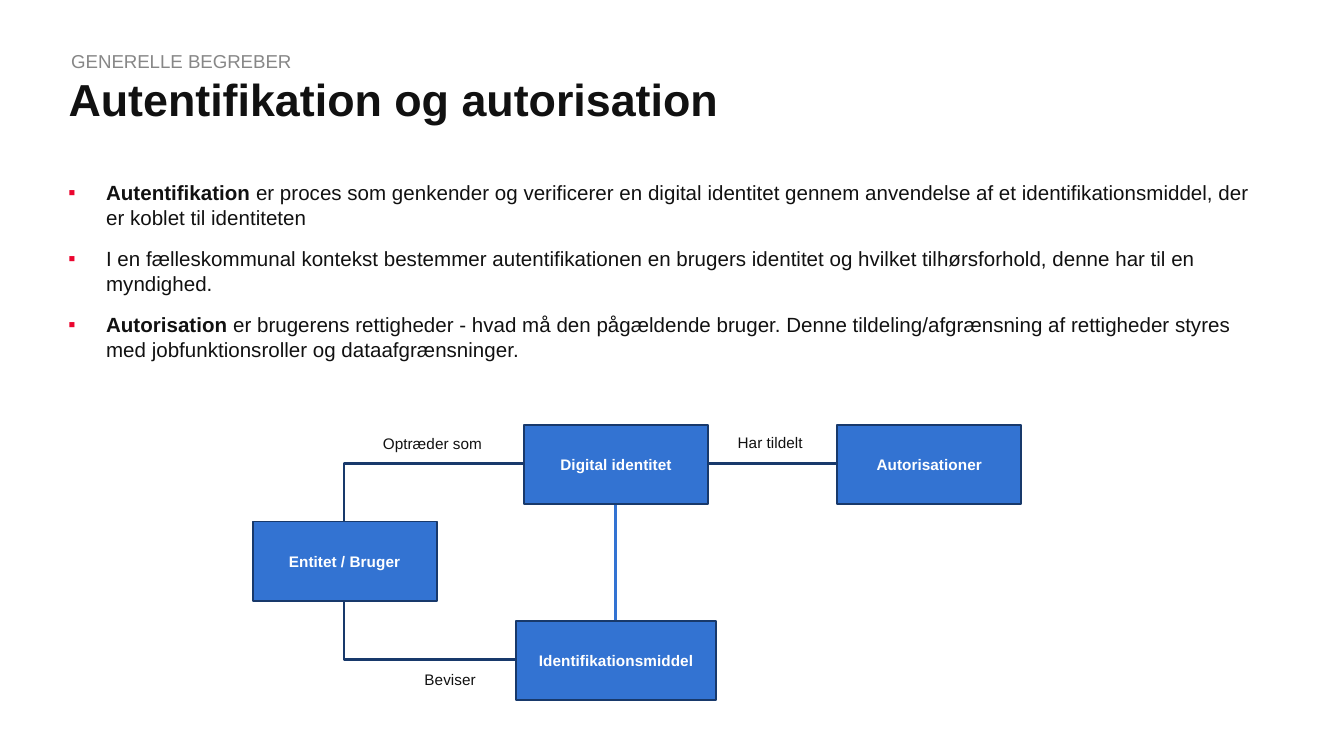
from lxml.etree import SubElement
from pptx import Presentation
from pptx.dml.color import RGBColor
from pptx.enum.shapes import MSO_CONNECTOR, MSO_SHAPE
from pptx.enum.text import MSO_ANCHOR, PP_ALIGN
from pptx.oxml.ns import qn
from pptx.util import Inches, Pt

COLORS = {
    "text": "111111",
    "muted": "878787",
    "bullet": "EB052F",
    "blue": "3373D2",
    "navy": "18396B",
    "white": "FFFFFF",
}
FONT = "Arial"
LABEL_SIZE = 8.25
BOX_WIDTH, BOX_HEIGHT = 1.37, 0.59

BULLETS = [
    [("Autentifikation", True),
     (" er proces som genkender og verificerer en digital identitet gennem anvendelse "
      "af et identifikationsmiddel, der er koblet til identiteten", False)],
    [("I en fælleskommunal kontekst bestemmer autentifikationen en brugers identitet "
      "og hvilket tilhørsforhold, denne har til en myndighed.", False)],
    [("Autorisation", True),
     (" er brugerens rettigheder - hvad må den pågældende bruger. Denne "
      "tildeling/afgrænsning af rettigheder styres med jobfunktionsroller og "
      "dataafgrænsninger.", False)],
]
ENTITIES = [
    ("Entitet / Bruger", 1.88, 3.88, BOX_WIDTH),
    ("Identifikationsmiddel", 3.84, 4.62, 1.49),
    ("Digital identitet", 3.9, 3.16, BOX_WIDTH),
    ("Autorisationer", 6.23, 3.16, BOX_WIDTH),
]
LABELS = [
    ("Beviser", 3.06, 4.94, 0.94),
    ("Optræder som", 2.75, 3.18, 1.1),
    ("Har tildelt", 5.39, 3.17, 0.94),
]


def color(name):
    return RGBColor.from_string(COLORS[name])


def add_span(para, text, size, color_name="text", bold=False):
    span = para.add_run()
    span.text = text
    span.font.name = FONT
    span.font.size = Pt(size)
    span.font.bold = bold
    span.font.color.rgb = color(color_name)


def add_text_box(page, left, top, width, height, margins=(0.1, 0.05, 0.1, 0.05)):
    box = page.shapes.add_textbox(Inches(left), Inches(top), Inches(width), Inches(height))
    frame = box.text_frame
    frame.word_wrap = True
    (frame.margin_left, frame.margin_top,
     frame.margin_right, frame.margin_bottom) = map(Inches, margins)
    return frame


def set_bullet(para):
    properties = para._p.get_or_add_pPr()
    properties.set("marL", str(Inches(0.28)))
    properties.set("indent", str(-Inches(0.28)))
    bullet_color = SubElement(properties, qn("a:buClr"))
    SubElement(bullet_color, qn("a:srgbClr"), val=COLORS["bullet"])
    SubElement(properties, qn("a:buFont"), typeface=FONT)
    SubElement(properties, qn("a:buChar"), char="▪")


def add_bullets(page):
    frame = add_text_box(page, 0.51, 1.34, 8.9, 3.47, (0, 0, 0.1, 0))
    for index, spans in enumerate(BULLETS):
        para = frame.paragraphs[0] if index == 0 else frame.add_paragraph()
        set_bullet(para)
        para.space_before = Pt(3 if index else 0)
        para.space_after = Pt(6)
        for text, bold in spans:
            add_span(para, text, 11, bold=bold)


def add_entity(page, text, left, top, width):
    box = page.shapes.add_shape(
        MSO_SHAPE.RECTANGLE, Inches(left), Inches(top), Inches(width), Inches(BOX_HEIGHT))
    box.shadow.inherit = False
    box.fill.solid()
    box.fill.fore_color.rgb = color("blue")
    box.line.color.rgb = color("navy")
    box.line.width = Pt(1)
    box.text_frame.word_wrap = True
    box.text_frame.vertical_anchor = MSO_ANCHOR.MIDDLE
    para = box.text_frame.paragraphs[0]
    para.alignment = PP_ALIGN.CENTER
    add_span(para, text, LABEL_SIZE, "white", bold=True)


def add_link(page, start, end, color_name="navy", bent=False):
    kind = MSO_CONNECTOR.ELBOW if bent else MSO_CONNECTOR.STRAIGHT
    link = page.shapes.add_connector(kind, *map(Inches, start + end))
    link.line.color.rgb = color(color_name)
    link.line.width = Pt(1.5)
    properties = link.element.spPr
    if bent:
        properties.find(qn("a:prstGeom")).set("prst", "bentConnector2")
    SubElement(properties, qn("a:effectLst"))


def main():
    deck = Presentation()
    deck.slide_width = Inches(10)
    deck.slide_height = deck.slide_width * 9 // 16
    page = deck.slides.add_slide(deck.slide_layouts[6])

    title = add_text_box(page, 0.51, 0.61, 8.98, 0.71, (0, 0, 0, 0)).paragraphs[0]
    title.line_spacing = 0.8
    add_span(title, "Autentifikation og autorisation", 24, bold=True)
    add_bullets(page)
    caption = add_text_box(page, 0.51, 0.37, 4.49, 0.16, (0.02, 0, 0, 0)).paragraphs[0]
    add_span(caption, "GENERELLE BEGREBER", 10, "muted")

    add_link(page, (4.58, 3.74), (4.58, 4.62), "blue")
    add_link(page, (3.9, 3.45), (2.56, 3.88), bent=True)
    add_link(page, (3.84, 4.91), (2.56, 4.47), bent=True)
    add_link(page, (5.27, 3.45), (6.23, 3.45))
    for text, left, top, width in LABELS:
        frame = add_text_box(page, left, top, width, 0.24)
        add_span(frame.paragraphs[0], text, LABEL_SIZE)
    for entity in ENTITIES:
        add_entity(page, *entity)

    deck.save("out.pptx")


if __name__ == "__main__":
    main()
